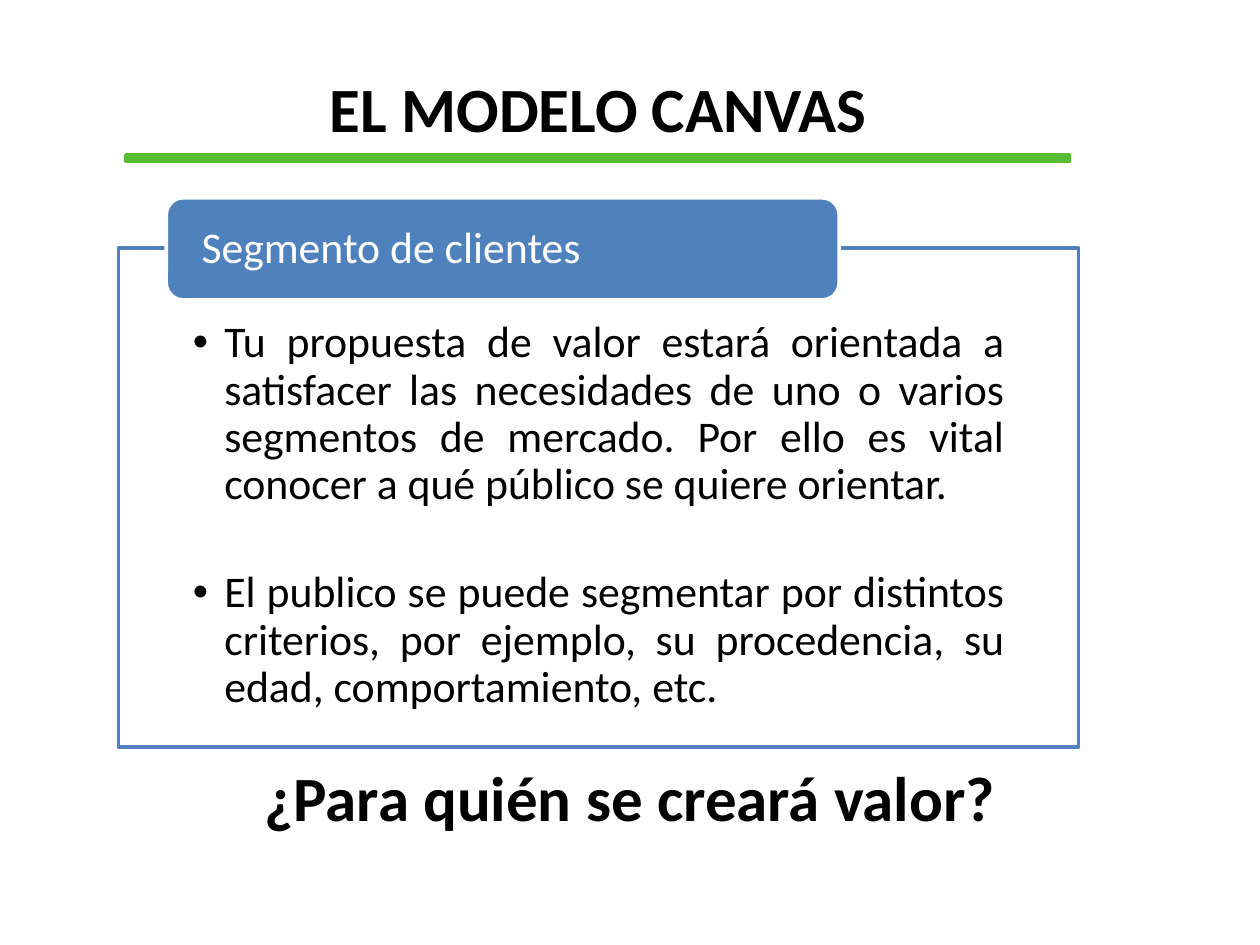
"""Build the customer segment slide of the Canvas model talk."""
from dataclasses import dataclass
from typing import Optional

from lxml.etree import SubElement as Sub
from pptx import Presentation
from pptx.dml.color import RGBColor as Rgb
from pptx.enum.shapes import MSO_SHAPE as Kind
from pptx.enum.text import MSO_ANCHOR as Anchor, MSO_AUTO_SIZE as Fit, PP_ALIGN as Align
from pptx.oxml.ns import qn
from pptx.util import Inches, Pt

COLS, ROWS = 100, 75
WIDE, HIGH = Inches(10), Inches(7.5)


@dataclass(frozen=True)
class Theme:
    font: str = "Calibri"
    head: int = 36
    body: int = 25
    line: int = 2
    ink: Rgb = Rgb(0, 0, 0)
    white: Rgb = Rgb(255, 255, 255)
    blue: Rgb = Rgb(0x4F, 0x81, 0xBD)
    green: Rgb = Rgb(0x57, 0xBC, 0x32)


@dataclass(frozen=True)
class Area:
    col: float
    row: float
    cols: float
    rows: float

    def place(self) -> tuple[int, int, int, int]:
        return across(self.col), down(self.row), across(self.cols), down(self.rows)


@dataclass(frozen=True)
class Panel:
    kind: Kind
    area: Area
    fill: Rgb
    edge: Rgb


@dataclass(frozen=True)
class Style:
    size: int
    ink: Rgb
    align: Align
    bold: bool = False
    pitch: Optional[float] = None
    after: int = 0
    bullet: bool = False


@dataclass(frozen=True)
class Inset:
    side: float
    top: float
    base: float


def across(cols: float) -> int:
    return round(WIDE * cols / COLS)


def down(rows: float) -> int:
    return round(HIGH * rows / ROWS)


def add_panel(slide, panel: Panel):
    shape = slide.shapes.add_shape(panel.kind, *panel.area.place())
    shape.shadow.inherit = False
    shape.fill.solid()
    shape.fill.fore_color.rgb = panel.fill
    shape.line.color.rgb = panel.edge
    shape.line.width = Pt(THEME.line)
    return shape


def add_mark(para) -> None:
    props = para._p.get_or_add_pPr()
    props.set("marL", str(across(2.5)))
    props.set("indent", str(-across(2.5)))
    Sub(props, qn("a:buFont")).set("typeface", "Arial")
    Sub(props, qn("a:buChar")).set("char", "•")


def write(frame, lines: list[str], style: Style) -> None:
    frame.word_wrap = True
    for i, line in enumerate(lines):
        para = frame.add_paragraph() if i else frame.paragraphs[0]
        para.alignment = style.align
        if style.pitch:
            para.line_spacing = style.pitch
        if i < len(lines) - 1:
            para.space_after = Pt(style.after)
        if style.bullet:
            add_mark(para)
        run = para.add_run()
        run.text = line
        font = run.font
        font.name, font.size, font.bold = THEME.font, Pt(style.size), style.bold
        font.color.rgb = style.ink


def pad(frame, inset: Inset, anchor: Anchor) -> None:
    frame.margin_left = frame.margin_right = across(inset.side)
    frame.margin_top, frame.margin_bottom = down(inset.top), down(inset.base)
    frame.vertical_anchor = anchor


def add_head(slide, area: Area, text: str) -> None:
    frame = slide.shapes.add_textbox(*area.place()).text_frame
    frame.auto_size = Fit.SHAPE_TO_FIT_TEXT
    write(frame, [text], HEAD)


THEME = Theme()
HEAD = Style(THEME.head, THEME.ink, Align.CENTER, bold=True)
BODY = Style(THEME.body, THEME.ink, Align.JUSTIFY, pitch=0.9, after=35, bullet=True)
LABEL = Style(THEME.body, THEME.white, Align.LEFT, pitch=0.9)
RULE = Panel(Kind.RECTANGLE, Area(10, 12.3, 74.9, 0.5), THEME.green, THEME.green)
BOX = Panel(Kind.RECTANGLE, Area(9.4, 19.7, 76.2, 39.6), THEME.white, THEME.blue)
TAB = Panel(Kind.ROUNDED_RECTANGLE, Area(13.2, 15.7, 53.4, 8.1), THEME.blue, THEME.white)
POINTS = [
    "Tu propuesta de valor estará orientada a satisfacer las necesidades de uno o "
    "varios segmentos de mercado. Por ello es vital conocer a qué público se quiere "
    "orientar.",
    "El publico se puede segmentar por distintos criterios, por ejemplo, su "
    "procedencia, su edad, comportamiento, etc.",
]


def main() -> None:
    deck = Presentation()
    deck.slide_width, deck.slide_height = WIDE, HIGH
    slide = deck.slides.add_slide(deck.slide_layouts[6])
    add_panel(slide, RULE)
    add_head(slide, Area(22.5, 5, 50, 7.1), "EL MODELO CANVAS")
    box = add_panel(slide, BOX).text_frame
    pad(box, Inset(5.9, 5.7, 1.9), Anchor.TOP)
    write(box, POINTS, BODY)
    tab = add_panel(slide, TAB).text_frame
    pad(tab, Inset(2.4, 0, 0), Anchor.MIDDLE)
    write(tab, ["Segmento de clientes"], LABEL)
    add_head(slide, Area(14.5, 59.7, 71, 7.1), "¿Para quién se creará valor?")
    deck.save("out.pptx")


if __name__ == "__main__":
    main()
